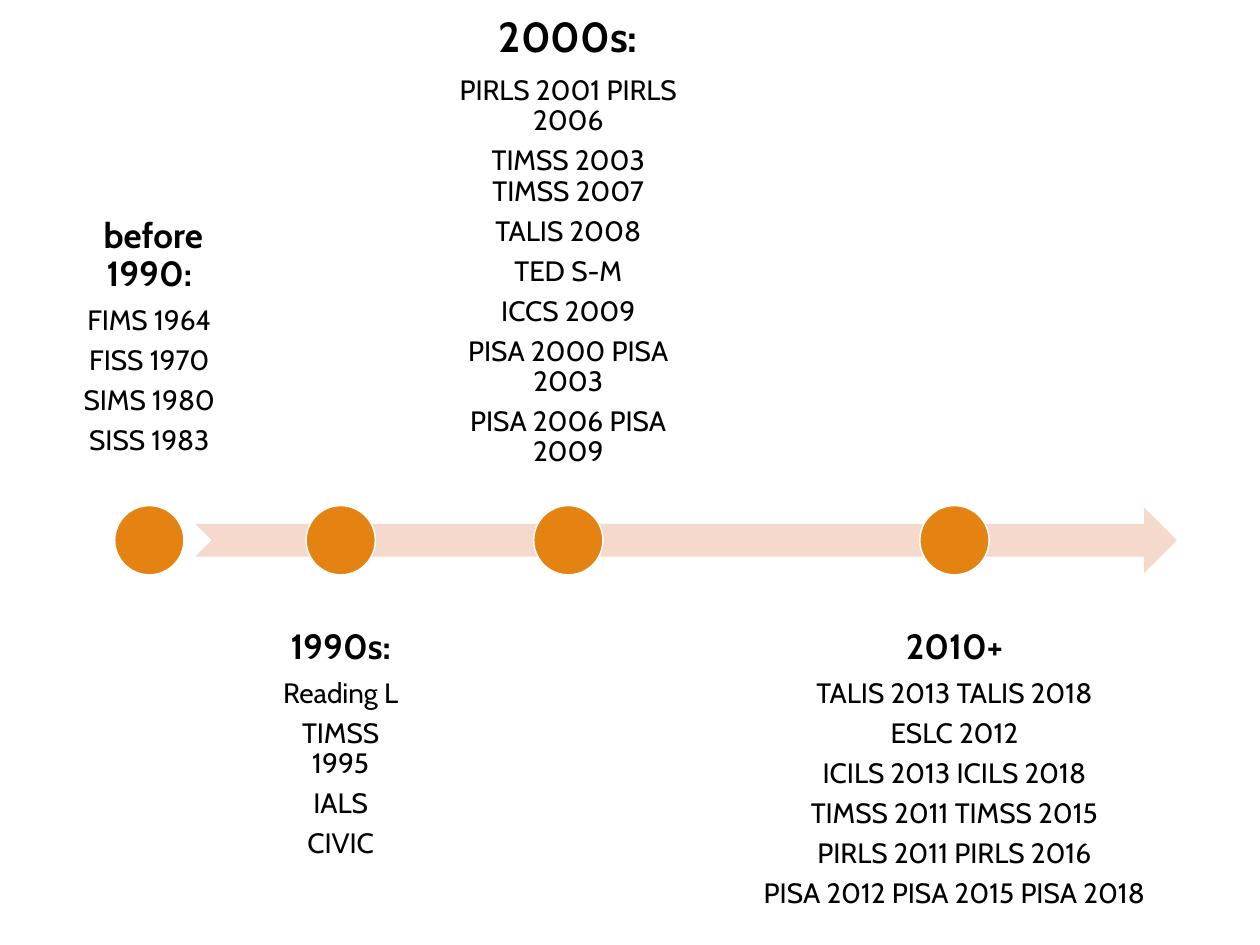
import pptx
import pptx.dml.color
import pptx.enum.shapes
import pptx.enum.text
import pptx.util

Pt = pptx.util.Pt
SHAPES = pptx.enum.shapes.MSO_SHAPE
ANCHOR = pptx.enum.text.MSO_ANCHOR
COLOURS = {"arrow": "F5D9CC", "marker": "E48312", "outline": "FFFFFF", "text": "000000"}
FONT = "Cabin"
BODY_SIZE = 16
MARKER_SIZE = 39.6
LABEL_HEIGHT = 158.4

# Each label sits above or below the arrow, centred on its marker.
PERIODS = [
    dict(left=28.1, top=111.6, width=114.5, above=True, inset=8.96, size=20,
         heading=" before 1990:",
         studies=["FIMS 1964", "FISS 1970", "SIMS 1980", "SISS 1983"]),
    dict(left=145.4, top=348.5, width=98.6, above=False, inset=11.2, size=20,
         heading="1990s:",
         studies=["Reading L", "TIMSS 1995", "IALS", "CIVIC"]),
    dict(left=247, top=122.4, width=155.5, above=True, inset=13.44, size=24,
         heading="2000s:",
         studies=["PIRLS 2001 PIRLS 2006", "TIMSS 2003 TIMSS 2007", "TALIS 2008",
                  "TED S-M", "ICCS 2009", "PISA 2000 PISA 2003",
                  "PISA 2006 PISA 2009"]),
    dict(left=406.8, top=348.5, width=277.2, above=False, inset=11.2, size=20,
         heading="2010+",
         studies=["TALIS 2013 TALIS 2018", "ESLC 2012", "ICILS 2013 ICILS 2018",
                  "TIMSS 2011 TIMSS 2015", "PIRLS 2011 PIRLS 2016",
                  "PISA 2012 PISA 2015 PISA 2018"]),
]


def rgb(name):
    return pptx.dml.color.RGBColor.from_string(COLOURS[name])


def write(paragraph, text, size=BODY_SIZE, bold=False):
    paragraph.alignment = pptx.enum.text.PP_ALIGN.CENTER
    paragraph.line_spacing = 0.9
    paragraph.space_after = Pt(0.35 * size)
    run = paragraph.add_run()
    run.text = text
    run.font.name = FONT
    run.font.size = Pt(size)
    run.font.bold = bold
    run.font.color.rgb = rgb("text")


def add_solid(slide, kind, left, top, width, height, fill, outline=None):
    solid = slide.shapes.add_shape(kind, Pt(left), Pt(top), Pt(width), Pt(height))
    solid.shadow.inherit = False
    solid.fill.solid()
    solid.fill.fore_color.rgb = rgb(fill)
    if outline:
        solid.line.color.rgb = rgb(outline)
        solid.line.width = Pt(0.85)
    else:
        solid.line.fill.background()


def add_label(slide, left, top, width, above, inset, size, heading, studies):
    label = slide.shapes.add_textbox(Pt(left), Pt(top), Pt(width), Pt(LABEL_HEIGHT))
    frame = label.text_frame
    frame.word_wrap = True
    frame.vertical_anchor = ANCHOR.BOTTOM if above else ANCHOR.TOP
    frame.margin_left = frame.margin_right = Pt(inset)
    frame.margin_top = frame.margin_bottom = Pt(inset)
    write(frame.paragraphs[0], heading, size=size, bold=True)
    for study in studies:
        write(frame.add_paragraph(), study)


def add_timeline(slide, left, top, width, height):
    """Draw the arrow in the given box, and the markers along its middle."""
    add_solid(slide, SHAPES.NOTCHED_RIGHT_ARROW, left, top, width, height, "arrow")
    marker_top = top + (height - MARKER_SIZE) / 2
    for period in PERIODS:
        add_label(slide, **period)
        marker_left = period["left"] + (period["width"] - MARKER_SIZE) / 2
        add_solid(slide, SHAPES.OVAL, marker_left, marker_top,
                  MARKER_SIZE, MARKER_SIZE, "marker", "outline")


def main():
    deck = pptx.Presentation()
    deck.slide_width, deck.slide_height = Pt(720), Pt(540)
    slide = deck.slides.add_slide(deck.slide_layouts[6])
    add_timeline(slide, 111.6, 290, 560.9, 37.4)
    deck.save("out.pptx")


if __name__ == "__main__":
    main()
